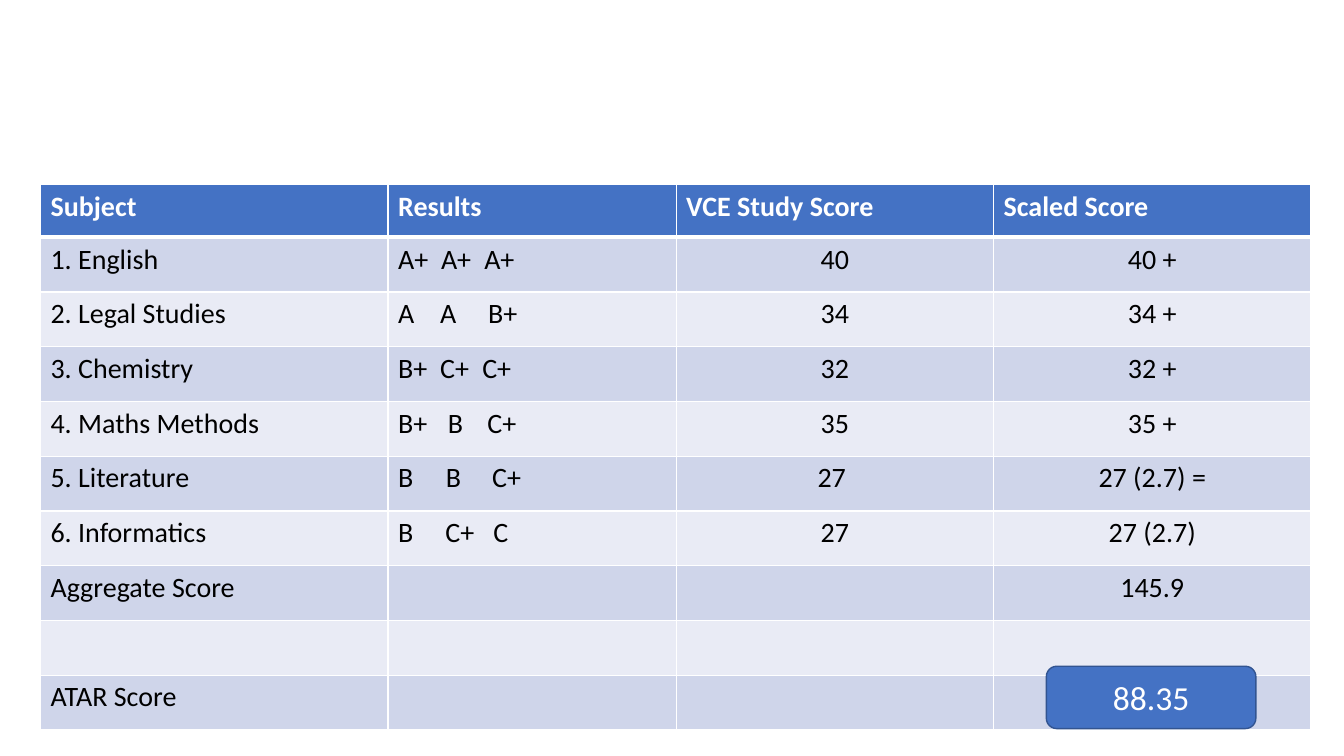
"""Build a slide with a table of study scores and the ATAR result."""
from dataclasses import dataclass

from lxml import etree
from pptx import Presentation, util as u
from pptx.dml import color
from pptx.enum import shapes, text
from pptx.oxml import ns

FONT = "Calibri"
BLUE, WHITE, BLACK = "4472C4", "FFFFFF", "000000"
BANDS = ("E9EBF5", "CFD5EA")
LEFT, MID = text.PP_ALIGN.LEFT, text.PP_ALIGN.CENTER
COLS = (8.76, 7.26, 8, 8)
HEAD, ROW = 1.33, 1.38


@dataclass
class Line:
    name: str = ""
    marks: str = ""
    study: str = ""
    scaled: str = ""
    stops: tuple[float, ...] = ()


LINES = (
    Line("Subject", "Results", "VCE Study Score", "Scaled Score"),
    Line("1. English", "A+\tA+\tA+", "40", "40 +", (1.08, 2.17)),
    Line("2. Legal Studies", "A\tA\tB+", "34", "34 +", (1.06, 2.27)),
    Line("3. Chemistry", "B+\tC+\tC+", "32", "32 +", (1.06, 2.12)),
    Line("4. Maths Methods", "B+\tB\tC+", "35", "35 +", (1.25, 2.25)),
    Line("5. Literature", "B\tB\tC+", "27 ", "27 (2.7) =", (1.2, 2.37)),
    Line("6. Informatics", "B\tC+\tC", "27", "27 (2.7)", (1.19, 2.4)),
    Line("Aggregate Score", scaled="145.9"),
    Line(),
    Line("ATAR Score"),
)


def rgb(code: str) -> color.RGBColor:
    return color.RGBColor.from_string(code)


def write(para, words: str, size: int, ink: str, align=LEFT, bold: bool = False) -> None:
    para.alignment = align
    run = para.add_run()
    run.text = words
    font = run.font
    font.name, font.size, font.bold = FONT, u.Pt(size), bold
    font.color.rgb = rgb(ink)


def edge(cell, side: str, width: float) -> None:
    props = cell._tc.get_or_add_tcPr()
    line = etree.SubElement(props, ns.qn(f"a:ln{side}"), w=str(u.Pt(width)))
    fill = etree.SubElement(line, ns.qn("a:solidFill"))
    etree.SubElement(fill, ns.qn("a:srgbClr"), val=WHITE)


def tabs(para, stops: tuple[float, ...]) -> None:
    group = etree.SubElement(para._p.get_or_add_pPr(), ns.qn("a:tabLst"))
    for stop in stops:
        etree.SubElement(group, ns.qn("a:tab"), pos=str(u.Cm(stop)), algn="l")


def paint(cell, row: int) -> None:
    thick = {(0, "B"), (1, "T")}
    for side in "LRTB":
        edge(cell, side, 3 if (row, side) in thick else 1)
    cell.fill.solid()
    cell.fill.fore_color.rgb = rgb(BANDS[row % 2] if row else BLUE)


def scores(slide) -> None:
    high = HEAD + ROW * (len(LINES) - 1)
    frame = slide.shapes.add_table(
        len(LINES), len(COLS), u.Cm(1.02), u.Cm(4.65), u.Cm(sum(COLS)), u.Cm(high))
    table = frame.table
    for col, width in zip(table.columns, COLS):
        col.width = u.Cm(width)
    for row, line in enumerate(LINES):
        table.rows[row].height = u.Cm(ROW if row else HEAD)
        for col, words in enumerate((line.name, line.marks, line.study, line.scaled)):
            cell = table.cell(row, col)
            paint(cell, row)
            para = cell.text_frame.paragraphs[0]
            if col == 1 and line.stops:
                tabs(para, line.stops)
            if words:
                align = MID if row and col > 1 else LEFT
                write(para, words, 20, BLACK if row else WHITE, align, not row)


def badge(slide, words: str) -> None:
    shape = slide.shapes.add_shape(
        shapes.MSO_SHAPE.ROUNDED_RECTANGLE,
        u.Cm(26.37), u.Cm(16.79), u.Cm(5.28), u.Cm(1.57))
    shape.shadow.inherit = False
    shape.fill.solid()
    shape.fill.fore_color.rgb = rgb(BLUE)
    shape.line.color.rgb = rgb("325491")
    shape.line.width = u.Pt(1)
    frame = shape.text_frame
    frame.word_wrap = True
    frame.vertical_anchor = text.MSO_ANCHOR.MIDDLE
    write(frame.paragraphs[0], words, 24, WHITE, MID)


def main() -> None:
    deck = Presentation()
    deck.slide_width, deck.slide_height = u.Cm(33.87), u.Cm(19.05)
    slide = deck.slides.add_slide(deck.slide_layouts[6])
    scores(slide)
    badge(slide, "88.35")
    deck.save("out.pptx")


if __name__ == "__main__":
    main()
